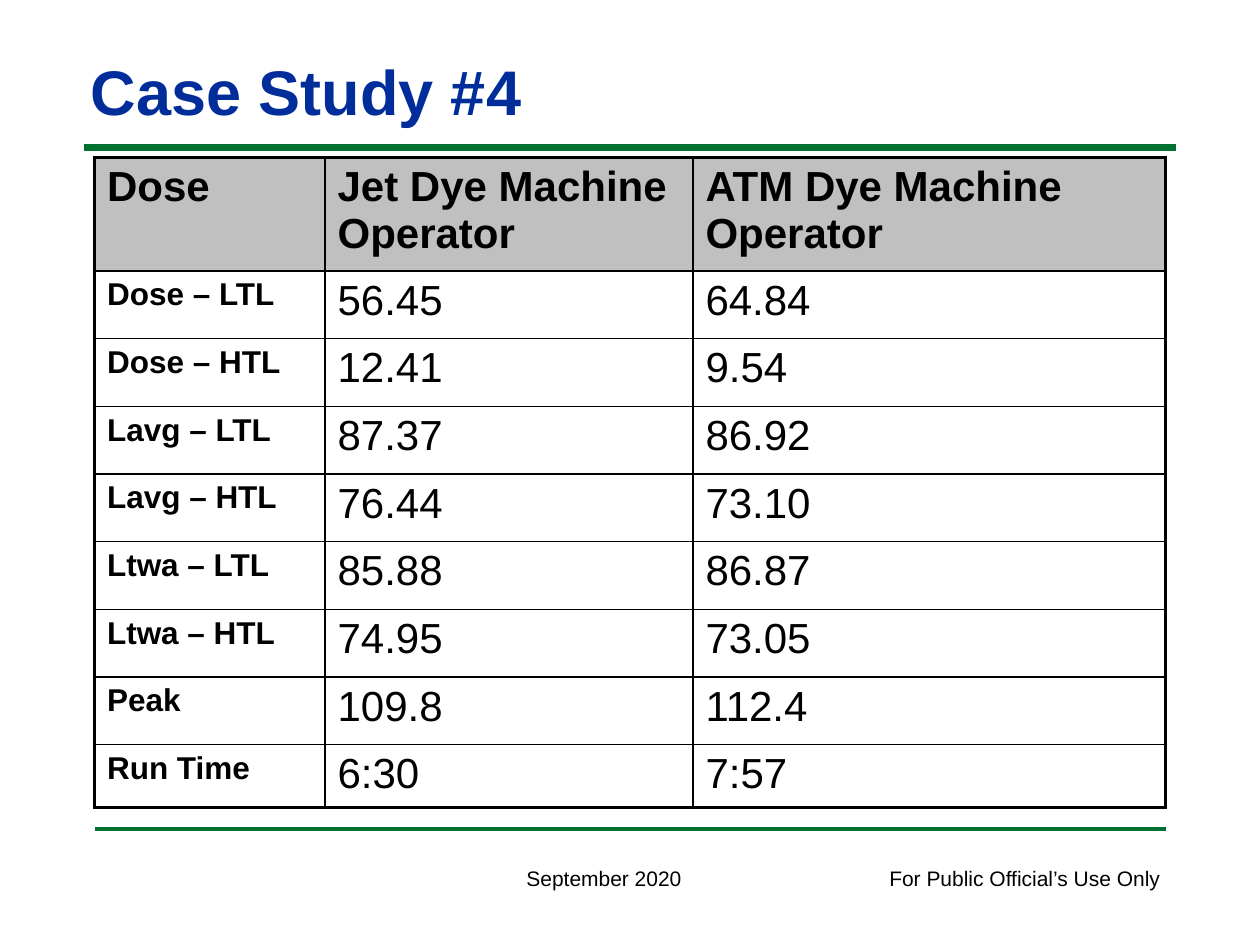
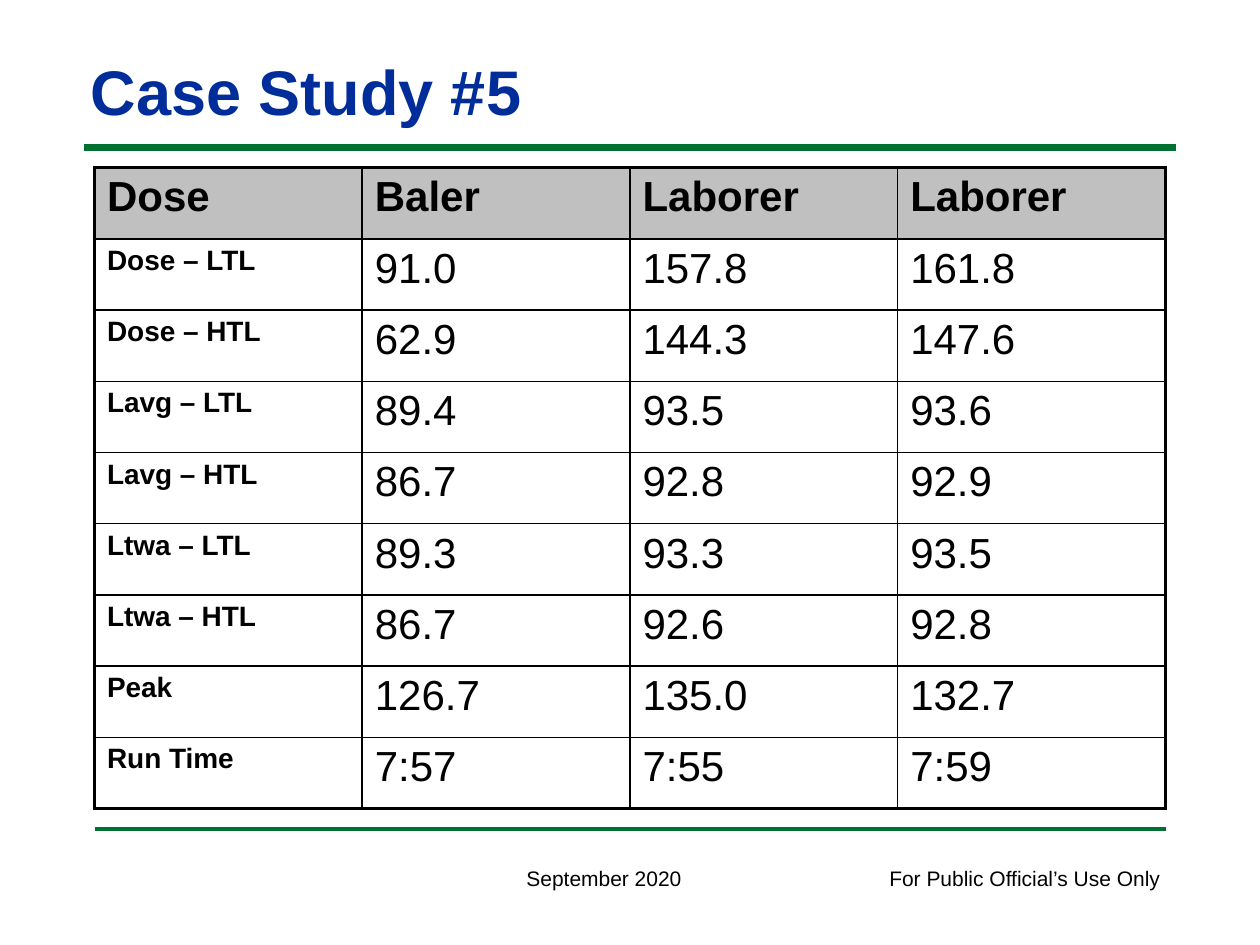
from lxml.etree import SubElement as Sub
from pptx import Presentation
from pptx.dml.color import RGBColor as RGB
from pptx.enum.shapes import MSO_CONNECTOR as Link
from pptx.enum.text import MSO_ANCHOR as Anchor, MSO_AUTO_SIZE as Auto
from pptx.oxml.ns import qn
from pptx.util import Inches, Pt

HUES = {"title": "012D9A", "rule": "007030", "ink": "000000", "head": "C0C0C0"}
FONT = "Arial"
THIN, THICK = 1, 2.25
LABELS = ["Dose – LTL", "Dose – HTL", "Lavg – LTL", "Lavg – HTL",
          "Ltwa – LTL", "Ltwa – HTL", "Peak", "Run Time"]


def write(frame, text, size=24, bold=False, hue="ink"):
    """Put formatted text into a text frame."""
    para = frame.paragraphs[0]
    para.text = text
    font = para.runs[0].font
    font.name, font.size, font.bold = FONT, Pt(size), bold
    font.color.rgb = RGB.from_string(HUES[hue])


def label(slide, box, text, wrap=False, pads=(0.1, 0.05), anchor=Anchor.TOP, **style):
    """Add a text box with the given insets and text format."""
    frame = slide.shapes.add_textbox(*map(Inches, box)).text_frame
    frame.word_wrap, frame.auto_size = wrap, Auto.SHAPE_TO_FIT_TEXT
    frame.vertical_anchor = anchor
    frame.margin_left = frame.margin_right = Inches(pads[0])
    frame.margin_top = frame.margin_bottom = Inches(pads[1])
    write(frame, text, **style)


def rule(slide, left, top, width, weight):
    """Draw a horizontal green rule."""
    ends = map(Inches, (left, top, left + width, top))
    line = slide.shapes.add_connector(Link.STRAIGHT, *ends)
    line.line.color.rgb = RGB.from_string(HUES["rule"])
    line.line.width = Pt(weight)
    Sub(line._element.spPr, qn("a:effectLst"))


def frame_slide(deck, title):
    """Add a slide with the shared title, rules and footer."""
    slide = deck.slides.add_slide(deck.slide_layouts[6])
    rule(slide, 0.67, 1.17, 8.66, 4)
    rule(slide, 0.75, 6.58, 8.5, 2)
    label(slide, (6.96, 6.82, 2.37, 0.3), "For Public Official’s Use Only", size=12)
    label(slide, (4.08, 6.82, 1.44, 0.3), "September 2020", size=12)
    label(slide, (0.67, 0.42, 9, 0.6), title, wrap=True, pads=(0.05, 0),
          anchor=Anchor.BOTTOM, size=36, bold=True, hue="title")
    return slide


def edge(cell, sides):
    """Draw the cell borders, thick where a side is outer."""
    props = cell._tc.get_or_add_tcPr()
    for spot, (side, outer) in enumerate(sides.items()):
        line = props.makeelement(qn(f"a:ln{side}"), {"w": str(Pt(THICK if outer else THIN))})
        Sub(Sub(line, qn("a:solidFill")), qn("a:srgbClr"), val=HUES["ink"])
        props.insert(spot, line)


def grid(slide, box, rows, widths, heights, small):
    """Add the dose table, sized by its column and row lengths."""
    table = slide.shapes.add_table(len(rows), len(widths), *map(Inches, box)).table
    table.first_row = table.horz_banding = False
    for col, width in zip(table.columns, widths):
        col.width = Inches(width)
    for row, height in zip(table.rows, heights):
        row.height = Inches(height)
    for r, row in enumerate(rows):
        for c, text in enumerate(row):
            cell = table.cell(r, c)
            if r == 0:
                cell.fill.solid()
                cell.fill.fore_color.rgb = RGB.from_string(HUES["head"])
            else:
                cell.fill.background()
            write(cell.text_frame, text, size=small if r and not c else 24,
                  bold=r == 0 or c == 0)
            edge(cell, {"L": c == 0, "R": c == len(widths) - 1,
                        "T": r == 0, "B": r == len(rows) - 1})


def study(deck, number, box, heads, values, widths, heights, small):
    """Build one case study slide from its columns of values."""
    slide = frame_slide(deck, f"Case Study #{number}")
    rows = [["Dose", *heads], *zip(LABELS, *values)]
    grid(slide, box, rows, widths, heights, small)


def main():
    """Build and save the deck."""
    deck = Presentation()
    deck.slide_width, deck.slide_height = Inches(10), Inches(7.5)

    wide, tall = 8.5, 5.16
    head, last = 0.9, 0.5
    step = (tall - head - last) / 7
    study(deck, 4, (0.75, 1.25, wide, tall),
          ["Jet Dye Machine Operator", "ATM Dye Machine Operator"],
          [["56.45", "12.41", "87.37", "76.44", "85.88", "74.95", "109.8", "6:30"],
           ["64.84", "9.54", "86.92", "73.10", "86.87", "73.05", "112.4", "7:57"]],
          [1.83, 2.92, 3.75], [head] + [step] * 7 + [last], 18)

    tall = 5.09
    study(deck, 5, (0.75, 1.33, wide, tall),
          ["Baler", "Laborer", "Laborer"],
          [["91.0", "62.9", "89.4", "86.7", "89.3", "86.7", "126.7", "7:57"],
           ["157.8", "144.3", "93.5", "92.8", "93.3", "92.6", "135.0", "7:55"],
           ["161.8", "147.6", "93.6", "92.9", "93.5", "92.8", "132.7", "7:59"]],
          [wide / 4] * 4, [tall / 9] * 9, 16)

    deck.save("out.pptx")


if __name__ == "__main__":
    main()
